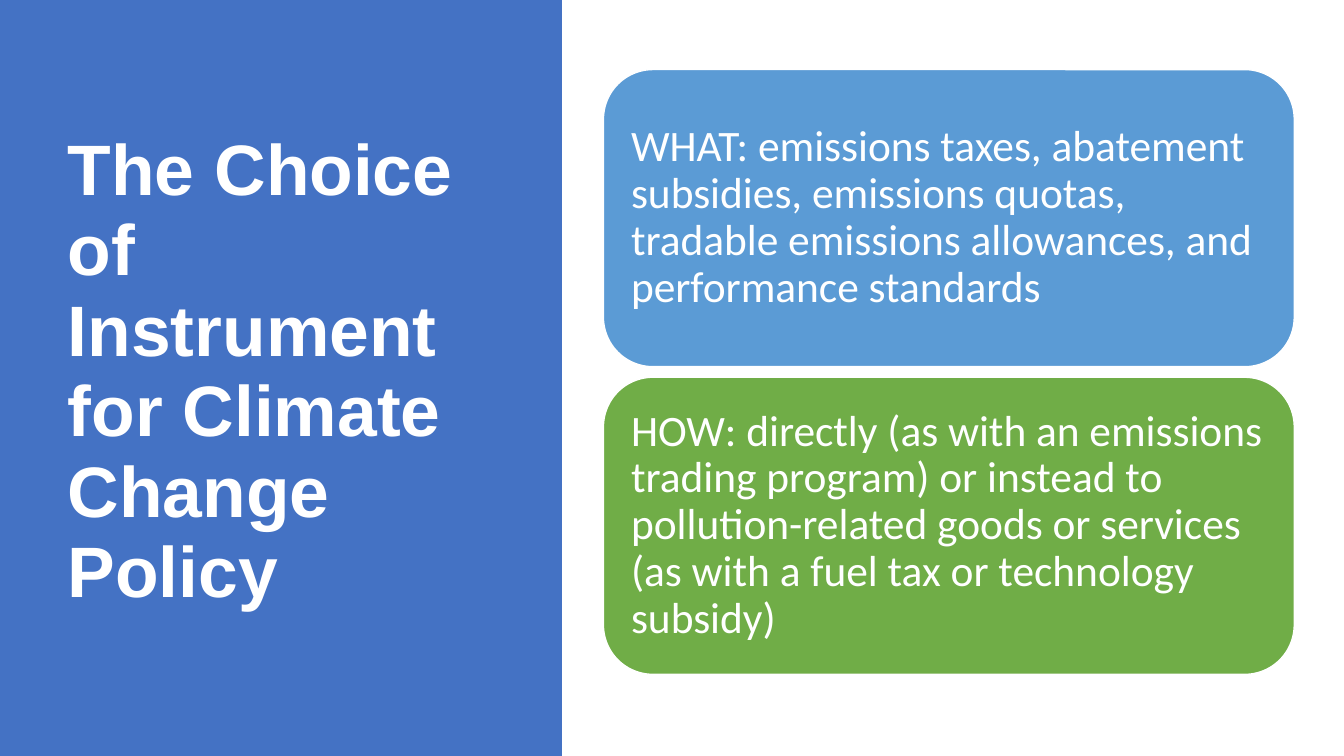
"""Build the slide on the choice of climate policy instrument."""
import dataclasses

import pptx
import pptx.dml.color
import pptx.enum.shapes
import pptx.enum.text
import pptx.util

INCH = pptx.util.Inches
SHAPE = pptx.enum.shapes.MSO_SHAPE
WIDE, HIGH = 13.33, 7.5


@dataclasses.dataclass(frozen=True)
class Theme:
    """Hold the colours, fonts and type sizes."""
    white: str = "FFFFFF"
    panel: str = "4472C4"
    cards: tuple = ("5B9BD5", "70AD47")
    head: str = "Arial"
    body: str = "Calibri"
    big: int = 51
    text: int = 31


THEME = Theme()
TITLE = "The Choice of Instrument for Climate Change Policy"
CARDS = (
    "WHAT: emissions taxes, abatement subsidies, emissions quotas, "
    "tradable emissions allowances, and performance standards",
    "HOW: directly (as with an emissions trading program) or instead to "
    "pollution-related goods or services (as with a fuel tax or technology subsidy)",
)


def color(code):
    """Turn a hex code into a colour."""
    return pptx.dml.color.RGBColor.from_string(code)


def place(left, top, width, height):
    """Turn shares of the slide's size into lengths."""
    return (INCH(left * WIDE), INCH(top * HIGH),
            INCH(width * WIDE), INCH(height * HIGH))


def write(shape, text, face, size, lead, bold=False):
    """Set left-aligned white text, centred in height."""
    frame = shape.text_frame
    frame.text = text
    frame.word_wrap = True
    frame.auto_size = pptx.enum.text.MSO_AUTO_SIZE.NONE
    frame.vertical_anchor = pptx.enum.text.MSO_ANCHOR.MIDDLE
    line = frame.paragraphs[0]
    line.alignment = pptx.enum.text.PP_ALIGN.LEFT
    line.line_spacing = lead
    line.font.name = face
    line.font.size = pptx.util.Pt(size)
    line.font.bold = bold
    line.font.color.rgb = color(THEME.white)


def block(slide, kind, box, fill):
    """Add a filled shape without outline or shadow."""
    shape = slide.shapes.add_shape(kind, *box)
    shape.shadow.inherit = False
    shape.fill.solid()
    shape.fill.fore_color.rgb = color(fill)
    shape.line.fill.background()
    return shape


def head(slide):
    """Put the title on its side panel."""
    panel = block(slide, SHAPE.RECTANGLE, place(0, 0, 0.418, 1), THEME.panel)
    title = slide.shapes.title
    title.element.addprevious(panel.element)
    title.left, title.top, title.width, title.height = place(
        0.043, 0.091, 0.312, 0.803)
    write(title, TITLE, THEME.head, THEME.big, 0.94, bold=True)


def card(slide, row, text, fill):
    """Add one rounded card in its row."""
    box = place(0.449, 0.092 + row * 0.407, 0.514, 0.393)
    shape = block(slide, SHAPE.ROUNDED_RECTANGLE, box, fill)
    shape.line.color.rgb = color(THEME.white)
    shape.line.width = pptx.util.Pt(1)
    frame = shape.text_frame
    frame.margin_left = frame.margin_right = INCH(0.13)
    frame.margin_top = frame.margin_bottom = INCH(0.13)
    write(shape, text, THEME.body, THEME.text, 0.9)


def main():
    """Build and save the slide."""
    deck = pptx.Presentation()
    deck.slide_width, deck.slide_height = INCH(WIDE), INCH(HIGH)
    slide = deck.slides.add_slide(deck.slide_layouts.get_by_name("Title Only"))
    head(slide)
    for row, (text, fill) in enumerate(zip(CARDS, THEME.cards)):
        card(slide, row, text, fill)
    deck.save("out.pptx")


if __name__ == "__main__":
    main()
